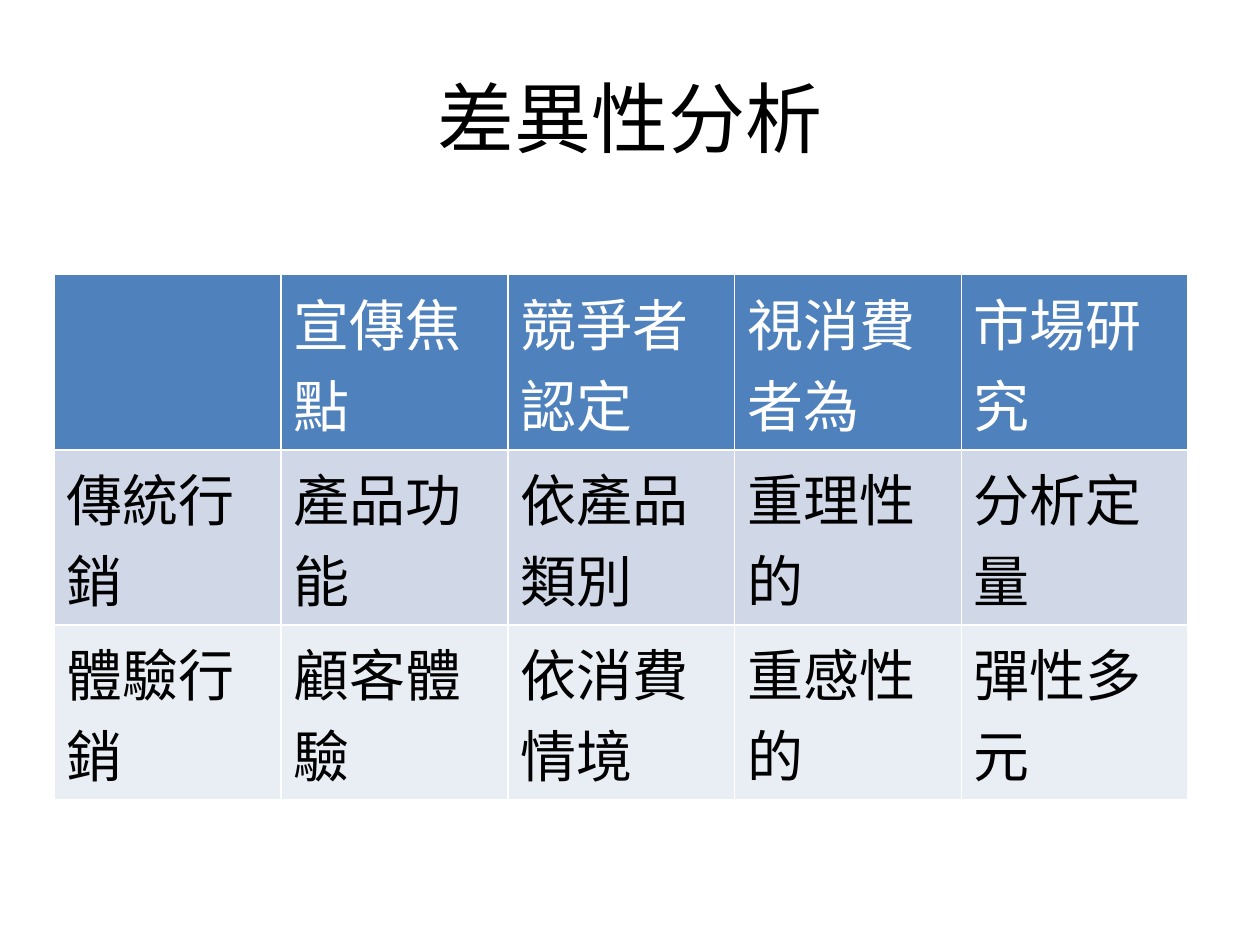
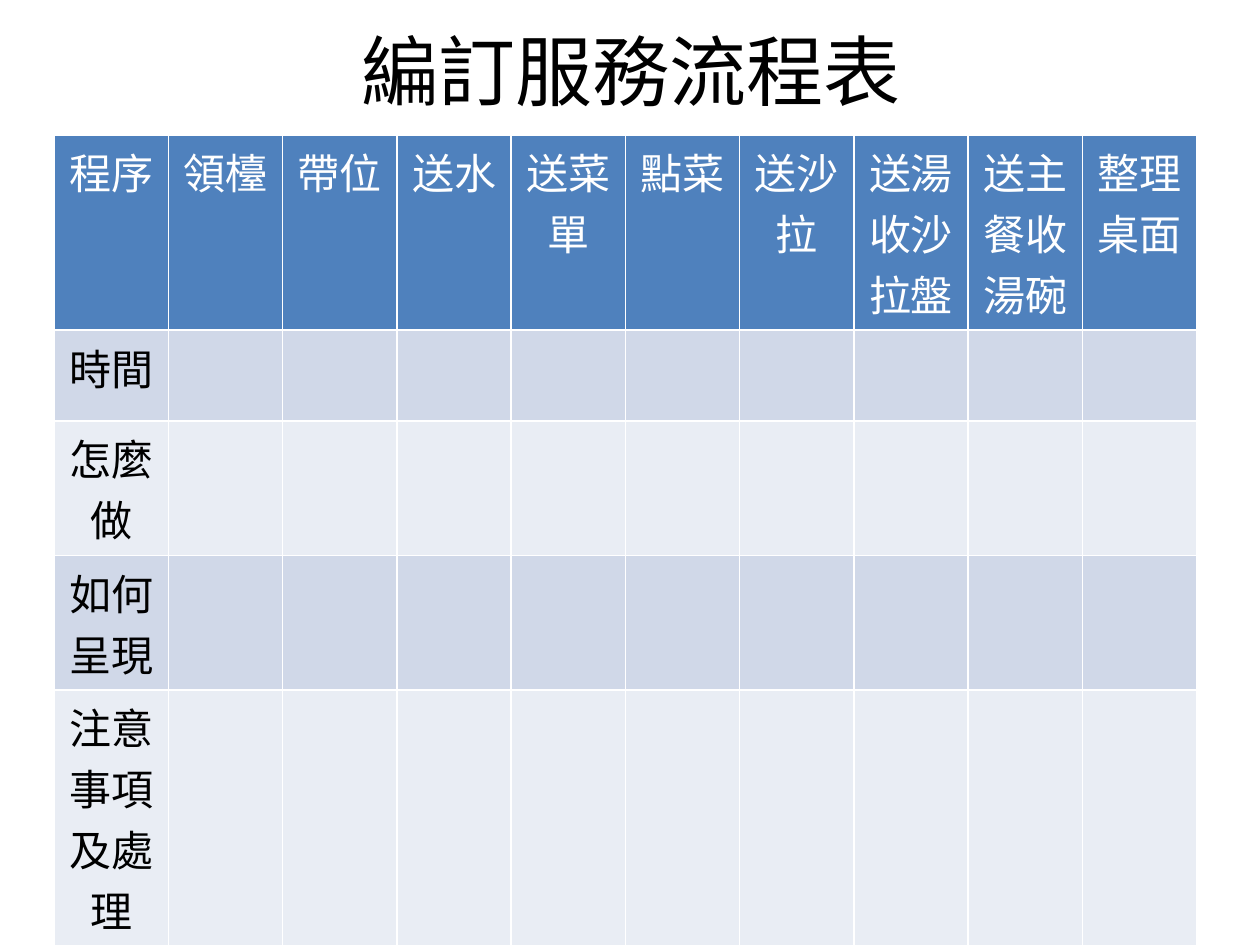
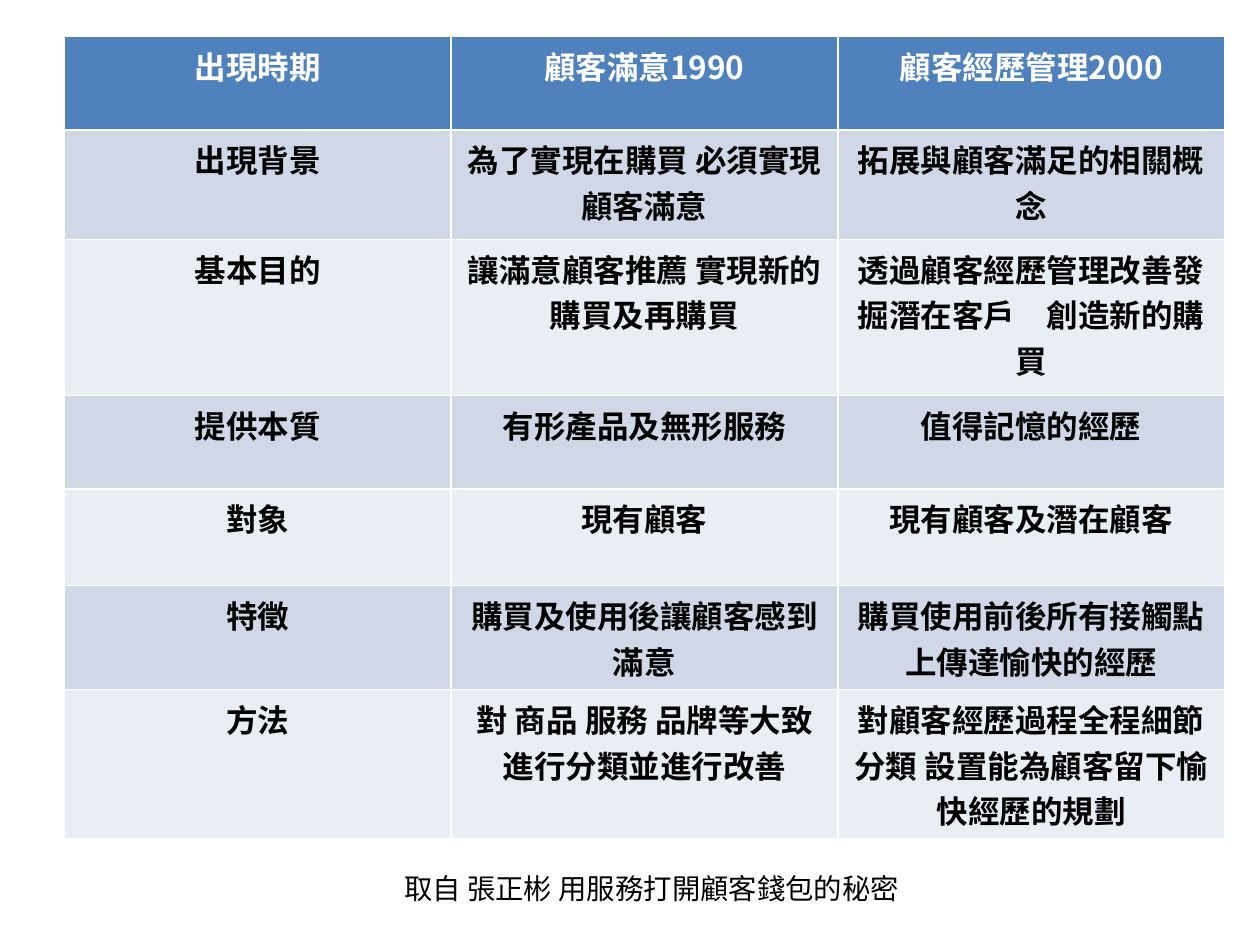
"""Build three table slides on experience marketing and service flow."""
from lxml.etree import SubElement
from pptx import Presentation
from pptx.dml.color import RGBColor
from pptx.enum.text import MSO_ANCHOR, MSO_AUTO_SIZE, PP_ALIGN
from pptx.oxml.ns import qn
from pptx.util import Inches, Pt

FONT = "Noto Sans CJK SC"
BLACK = RGBColor(0x00, 0x00, 0x00)
WHITE = RGBColor(0xFF, 0xFF, 0xFF)
HEADER = RGBColor(0x4F, 0x81, 0xBD)
BANDS = (RGBColor(0xD0, 0xD8, 0xE8), RGBColor(0xE9, 0xED, 0xF4))

SLIDES = [
    {
        "title": ("差異性分析", 44, (0.5, 0.3, 9, 1.25)),
        "box": (0.43, 2.18, 9, 3.5),
        "heights": [0.41] * 3,
        "size": 32, "bold": False, "align": PP_ALIGN.LEFT,
        "rows": [
            ["", "宣傳焦點", "競爭者認定", "視消費者為", "市場研究"],
            ["傳統行銷", "產品功能", "依產品類別", "重理性的", "分析定量"],
            ["體驗行銷", "顧客體驗", "依消費情境", "重感性的", "彈性多元"],
        ],
    },
    {
        "title": ("編訂服務流程表", 44, (0.51, 0.13, 9, 0.85)),
        "box": (0.43, 1.07, 9.07, 6.19),
        "heights": [1.41, 0.72, 0.98, 0.98, 1.41],
        "size": 24, "bold": False, "align": PP_ALIGN.CENTER,
        "rows": [
            ["程序", "領檯", "帶位", "送水", "送菜單", "點菜", "送沙拉",
             "送湯收沙拉盤", "送主餐收湯碗", "整理桌面"],
            ["時間"],
            ["怎麼做"],
            ["如何呈現"],
            ["注意事項及處理"],
        ],
    },
    {
        "title": ("取自 張正彬 用服務打開顧客錢包的秘密", 16.2, (0.67, 6.9, 9, 0.3)),
        "box": (0.51, 0.29, 9.21, 6.22),
        "heights": [0.74, 0.87, 1.24, 0.74, 0.77, 0.77, 1.1],
        "size": 18, "bold": True, "align": PP_ALIGN.CENTER,
        "rows": [
            ["出現時期", "顧客滿意1990", "顧客經歷管理2000"],
            ["出現背景", "為了實現在購買 必須實現顧客滿意", "拓展與顧客滿足的相關概念"],
            ["基本目的", "讓滿意顧客推薦 實現新的購買及再購買",
             "透過顧客經歷管理改善發掘潛在客戶　創造新的購買"],
            ["提供本質", "有形產品及無形服務", "值得記憶的經歷"],
            ["對象", "現有顧客", "現有顧客及潛在顧客"],
            ["特徵", "購買及使用後讓顧客感到滿意",
             "購買使用前後所有接觸點上傳達愉快的經歷"],
            ["方法", "對 商品 服務 品牌等大致進行分類並進行改善",
             "對顧客經歷過程全程細節分類 設置能為顧客留下愉快經歷的規劃"],
        ],
    },
]


def add_run(tf, text, size, color, align, bold=False):
    p = tf.paragraphs[0]
    p.alignment = align
    r = p.add_run()
    r.text = text
    r.font.name = FONT
    r.font.size = Pt(size)
    r.font.bold = bold
    r.font.color.rgb = color
    SubElement(r.font._element, qn("a:ea"), typeface=FONT)


def set_title(s, text, size, box):
    sp = s.shapes.title
    sp.left, sp.top, sp.width, sp.height = map(Inches, box)
    tf = sp.text_frame
    tf.auto_size = MSO_AUTO_SIZE.NONE
    tf.vertical_anchor = MSO_ANCHOR.MIDDLE
    add_run(tf, text, size, BLACK, PP_ALIGN.CENTER)


def set_borders(cell):
    tc_pr = cell._tc.get_or_add_tcPr()
    for i, side in enumerate(("lnL", "lnR", "lnT", "lnB")):
        ln = tc_pr.makeelement(qn(f"a:{side}"), {"w": str(Pt(1))})
        fill = SubElement(ln, qn("a:solidFill"))
        SubElement(fill, qn("a:srgbClr"), val=str(WHITE))
        tc_pr.insert(i, ln)


def add_grid(s, data):
    rows = data["rows"]
    n_cols = len(rows[0])
    box = [Inches(v) for v in data["box"]]
    table = s.shapes.add_table(len(rows), n_cols, *box).table
    for col in table.columns:
        col.width = box[2] // n_cols
    for i, (row, height) in enumerate(zip(rows, data["heights"])):
        table.rows[i].height = Inches(height)
        for j in range(n_cols):
            cell = table.cell(i, j)
            cell.fill.solid()
            cell.fill.fore_color.rgb = BANDS[(i - 1) % 2] if i else HEADER
            set_borders(cell)
            if j < len(row) and row[j]:
                add_run(cell.text_frame, row[j], data["size"],
                        BLACK if i else WHITE, data["align"], data["bold"])


def main():
    prs = Presentation()
    prs.slide_width, prs.slide_height = Inches(10), Inches(7.5)
    for data in SLIDES:
        s = prs.slides.add_slide(prs.slide_layouts[5])
        set_title(s, *data["title"])
        add_grid(s, data)
    prs.save("out.pptx")


if __name__ == "__main__":
    main()
